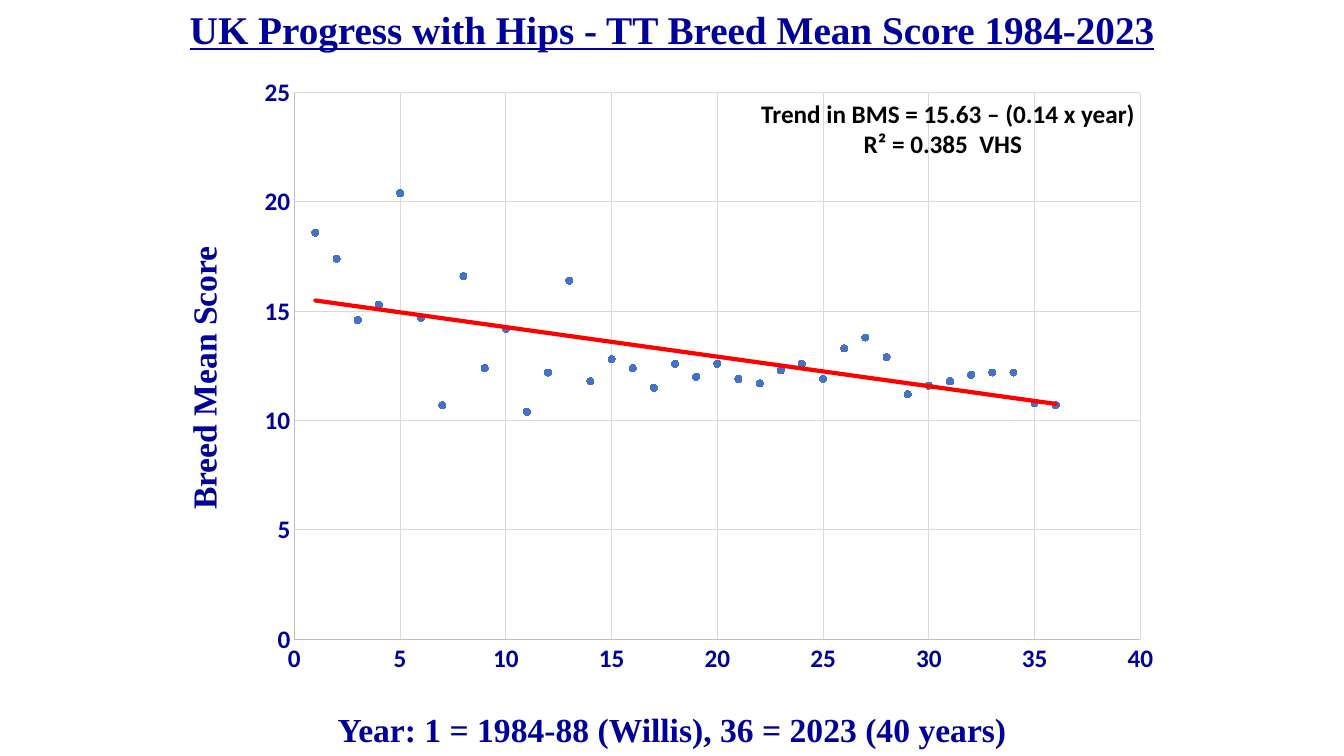
from dataclasses import dataclass

from lxml import etree
from pptx import Presentation
from pptx import util as u
from pptx.chart import data
from pptx.dml.color import RGBColor
from pptx.enum import chart as ch, text as tx
from pptx.oxml import ns


@dataclass(frozen=True)
class Theme:
    navy: str = "000099"
    black: str = "000000"
    blue: str = "4472C4"
    red: str = "FF0000"
    axis: str = "BFBFBF"
    grid: str = "D9D9D9"
    serif: str = "Times New Roman"
    sans: str = "Calibri"
    head: int = 28
    label: int = 24
    small: int = 18


T = Theme()
SCORES = [18.6, 17.4, 14.6, 15.3, 20.4, 14.7, 10.7, 16.6, 12.4,
          14.2, 10.4, 12.2, 16.4, 11.8, 12.8, 12.4, 11.5, 12.6,
          12, 12.6, 11.9, 11.7, 12.3, 12.6, 11.9, 13.3, 13.8,
          12.9, 11.2, 11.6, 11.8, 12.1, 12.2, 12.2, 10.8, 10.7]


def px(n):
    return u.Emu(round(n * 914400 / 100.8))


def rgb(code):
    return RGBColor.from_string(code)


def style(font, face, size, color):
    font.name, font.size, font.bold = face, u.Pt(size), True
    font.color.rgb = rgb(color)


def stroke(line, color, width):
    line.color.rgb = rgb(color)
    line.width = u.Pt(width)


def write(shape, words, face, size, color, aligns):
    frame = shape.text_frame
    frame.word_wrap = True
    frame.vertical_anchor = tx.MSO_ANCHOR.TOP
    frame.text = words
    for para, align in zip(frame.paragraphs, aligns):
        para.alignment = align
        for run in para.runs:
            style(run.font, face, size, color)


def title(slide, box, words):
    head = slide.shapes.title
    head.left, head.top, head.width, head.height = map(px, box)
    write(head, words, T.serif, T.head, T.navy, [tx.PP_ALIGN.CENTER])
    head.text_frame.paragraphs[0].runs[0].font.underline = True


def label(slide, box, words, turn=0):
    area = slide.shapes.add_textbox(*map(px, box))
    area.rotation = turn
    write(area, words, T.serif, T.label, T.navy, [tx.PP_ALIGN.CENTER])


def note(slide, box, words):
    area = slide.shapes.add_textbox(*map(px, box))
    write(area, words, T.sans, T.small, T.black,
          [tx.PP_ALIGN.RIGHT, tx.PP_ALIGN.CENTER])


def scale(axis, top):
    axis.minimum_scale, axis.maximum_scale, axis.major_unit = 0, top, 5
    axis.has_title = False
    axis.major_tick_mark = axis.minor_tick_mark = ch.XL_TICK_MARK.NONE
    axis.has_major_gridlines = True
    stroke(axis.major_gridlines.format.line, T.grid, 0.75)
    stroke(axis.format.line, T.axis, 0.75)
    style(axis.tick_labels.font, T.sans, T.small, T.navy)
    axis.tick_labels.number_format = "General"
    axis.tick_labels.number_format_is_linked = False


def trend(series):
    line = etree.fromstring(
        f'<c:trendline {ns.nsdecls("c", "a")}><c:spPr>'
        f'<a:ln w="{u.Pt(3)}" cap="rnd"><a:solidFill>'
        f'<a:srgbClr val="{T.red}"/></a:solidFill></a:ln></c:spPr>'
        '<c:trendlineType val="linear"/><c:dispRSqr val="0"/>'
        '<c:dispEq val="0"/></c:trendline>')
    series._element.find(ns.qn("c:xVal")).addprevious(line)


def inset(chart, **parts):
    area = chart._chartSpace.find(".//" + ns.qn("c:plotArea"))
    old = area.find(ns.qn("c:layout"))
    if old is not None:
        area.remove(old)
    sides = "".join(f'<c:{k} val="{v}"/>' for k, v in parts.items())
    area.insert(0, etree.fromstring(
        f'<c:layout {ns.nsdecls("c")}><c:manualLayout>'
        '<c:layoutTarget val="inner"/><c:xMode val="edge"/>'
        f'<c:yMode val="edge"/>{sides}</c:manualLayout></c:layout>'))


def scatter(slide, box):
    points = data.XyChartData()
    scores = points.add_series("Series 1")
    for year, score in enumerate(SCORES, 1):
        scores.add_data_point(year, score)
    chart = slide.shapes.add_chart(
        ch.XL_CHART_TYPE.XY_SCATTER, *map(px, box), points).chart
    chart.has_legend = chart.has_title = False
    chart.font.name, chart.font.size = T.sans, u.Pt(10)
    chart.font.color.rgb = rgb(T.black)
    scale(chart.category_axis, 40)
    scale(chart.value_axis, 25)
    inset(chart, x=0.055, y=0.025, w=0.908, h=0.872)

    # Dots without a joining line
    plot = chart.plots[0]
    plot.vary_by_categories = False
    series = plot.series[0]
    series.format.line.fill.background()
    dot = series.marker
    dot.style, dot.size = ch.XL_MARKER_STYLE.CIRCLE, 5
    dot.format.fill.solid()
    dot.format.fill.fore_color.rgb = rgb(T.blue)
    stroke(dot.format.line, T.blue, 0.75)
    trend(series)


def main():
    deck = Presentation()
    deck.slide_width, deck.slide_height = px(1344), px(756)
    slide = deck.slides.add_slide(deck.slide_layouts[5])

    # Chart and heading
    scatter(slide, (243, 77, 932, 627))
    title(slide, (168, 0, 1008, 57),
          "UK Progress with Hips - TT Breed Mean Score 1984-2023")

    # Axis labels
    label(slide, (168, 704, 1008, 50),
          "Year: 1 = 1984-88 (Willis), 36 = 2023 (40 years)")
    label(slide, (-63, 353, 532, 50), "Breed Mean Score", 270)

    # Trend equation
    note(slide, (741, 93, 404, 72),
         "Trend in BMS = 15.63 – (0.14 x year)\nR² = 0.385  VHS")
    deck.save("out.pptx")


if __name__ == "__main__":
    main()
